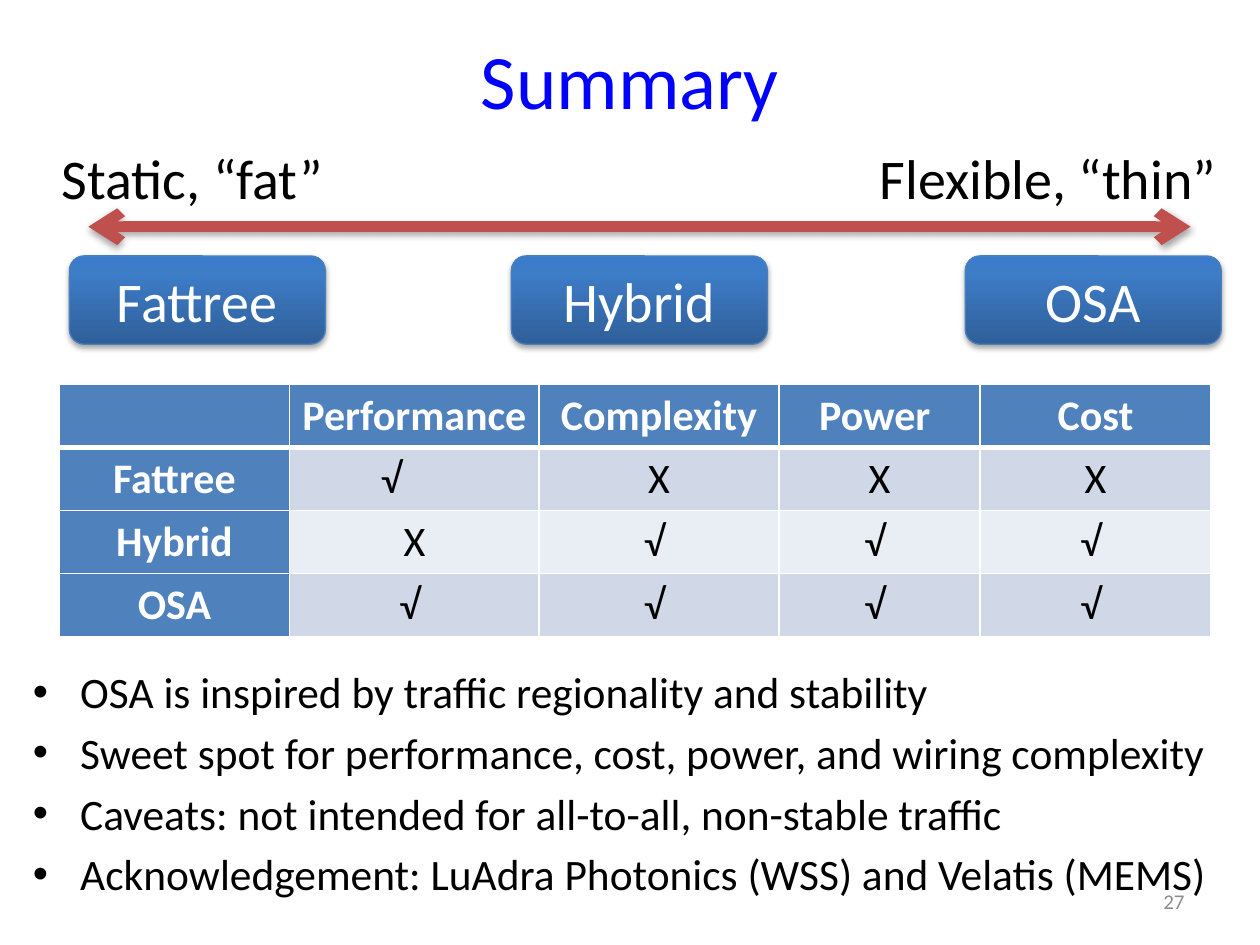
"""Build the summary slide comparing the Fattree, Hybrid and OSA designs."""
import copy

import lxml.etree
import pptx
import pptx.dml.color
import pptx.enum.shapes
import pptx.enum.text
import pptx.oxml.ns
import pptx.util

Cm = pptx.util.Cm
Pt = pptx.util.Pt
ALIGN = pptx.enum.text.PP_ALIGN
ANCHOR = pptx.enum.text.MSO_ANCHOR
qn = pptx.oxml.ns.qn


def color(value):
    """Turn a hex string into a colour."""
    return pptx.dml.color.RGBColor.from_string(value)


def add_element(parent, tag, **attributes):
    """Append an XML child with the given attributes."""
    values = {key: str(value) for key, value in attributes.items()}
    return lxml.etree.SubElement(parent, qn(tag), values)


def write_text(frame, text, size=24, fill="000000", bold=False, align=None,
               anchor=None, font="Calibri"):
    """Write one paragraph per line of text in one format."""
    frame.text = text
    frame.word_wrap = True
    if anchor is not None:
        frame.vertical_anchor = anchor
    for paragraph in frame.paragraphs:
        paragraph.alignment = align
        for run in paragraph.runs:
            run.font.name, run.font.size, run.font.bold = font, Pt(size), bold
            run.font.color.rgb = color(fill)


class SummarySlide:
    """Hold the style and the current slide."""

    HEADER, BANDS = "4F81BD", ("D0D8E8", "E9EDF4")
    CARD_STOPS = ((0, "2F5F99"), (0.8, "3D7CC7"), (1, "3A7CCB"))
    CARD_EDGE, ARROW, WHITE = "4B7EBC", "C0504D", "FFFFFF"

    def __init__(self, presentation):
        """Add a title and content slide."""
        self.slide = presentation.slides.add_slide(presentation.slide_layouts[1])
        self.shapes = self.slide.shapes

    def placeholder(self, index, text, box, **style):
        """Move and fill a template placeholder."""
        holder = self.slide.placeholders[index]
        holder.left, holder.top, holder.width, holder.height = map(Cm, box)
        write_text(holder.text_frame, text, **style)
        holder.text_frame.auto_size = pptx.enum.text.MSO_AUTO_SIZE.NONE

    def label(self, text, box, **style):
        """Add a text box."""
        write_text(self.shapes.add_textbox(*map(Cm, box)).text_frame, text, **style)

    def shadow(self, effects):
        """Put the soft downward shadow in an effect list."""
        outer = add_element(effects, "a:outerShdw", blurRad=40000, dist=23000,
                            dir=5400000, rotWithShape=0)
        black = add_element(outer, "a:srgbClr", val="000000")
        add_element(black, "a:alpha", val=35000)

    def double_arrow(self, left, right, height):
        """Add a horizontal line with an arrowhead at both ends."""
        axis = self.shapes.add_connector(
            pptx.enum.shapes.MSO_CONNECTOR.STRAIGHT,
            Cm(left), Cm(height), Cm(right), Cm(height))
        axis.line.color.rgb = color(self.ARROW)
        axis.line.width = Pt(6)
        outline = axis.line._get_or_add_ln()
        for end in ("a:headEnd", "a:tailEnd"):
            add_element(outline, end, type="arrow")
        self.shadow(add_element(axis._element.spPr, "a:effectLst"))

    def card(self, text, left, top, width, height):
        """Add a rounded box with a vertical gradient."""
        card = self.shapes.add_shape(
            pptx.enum.shapes.MSO_SHAPE.ROUNDED_RECTANGLE,
            Cm(left), Cm(top), Cm(width), Cm(height))
        card.fill.gradient()
        card.fill.gradient_angle = 90
        stops = card._element.spPr.find(".//" + qn("a:gsLst"))
        stops.append(copy.deepcopy(stops[-1]))
        for stop, (position, value) in zip(card.fill.gradient_stops, self.CARD_STOPS):
            stop.position = position
            stop.color.rgb = color(value)
        card.line.color.rgb = color(self.CARD_EDGE)
        card.line.width = Pt(0.75)
        card.shadow.inherit = False
        self.shadow(card._element.spPr.find(qn("a:effectLst")))
        write_text(card.text_frame, text, size=32, fill=self.WHITE,
                   align=ALIGN.CENTER, anchor=ANCHOR.MIDDLE)

    def borders(self, cell, top, bottom):
        """Draw white borders around a cell, widths in points."""
        properties = cell._tc.get_or_add_tcPr()
        sides = (("a:lnL", 1), ("a:lnR", 1), ("a:lnT", top), ("a:lnB", bottom))
        for index, (side, width) in enumerate(sides):
            edge = add_element(properties, side, w=Pt(width))
            add_element(add_element(edge, "a:solidFill"), "a:srgbClr", val=self.WHITE)
            properties.insert(index, edge)

    def comparison(self, rows, left, top, widths, row_height):
        """Add the table with a header row and a header column."""
        grid = self.shapes.add_table(
            len(rows), len(widths), Cm(left), Cm(top),
            Cm(sum(widths)), Cm(row_height * len(rows))).table
        for column, width in zip(grid.columns, widths):
            column.width = Cm(width)
        for r, row in enumerate(rows):
            grid.rows[r].height = Cm(row_height)
            for c, text in enumerate(row):
                cell = grid.cell(r, c)
                heading = r == 0 or c == 0
                cell.fill.solid()
                cell.fill.fore_color.rgb = color(
                    self.HEADER if heading else self.BANDS[(r - 1) % 2])
                self.borders(cell, 3 if r == 1 else 1, 3 if r == 0 else 1)
                write_text(cell.text_frame, text, bold=heading, align=ALIGN.CENTER,
                           fill=self.WHITE if heading else "000000")
        return grid


def main():
    """Build and save the slide."""
    deck = pptx.Presentation()
    deck.slide_width, deck.slide_height = Cm(25.4), Cm(19.05)
    summary = SummarySlide(deck)

    summary.placeholder(0, "Summary", (1.27, 0, 22.86, 3.18), size=44,
                        fill="0000FF", align=ALIGN.CENTER, anchor=ANCHOR.MIDDLE)
    takeaways = (
        "OSA is inspired by traffic regionality and stability",
        "Sweet spot for performance, cost, power, and wiring complexity",
        "Caveats: not intended for all-to-all, non-stable traffic",
        "Acknowledgement: LuAdra Photonics (WSS) and Velatis (MEMS)",
    )
    summary.placeholder(1, "\n".join(takeaways), (0.41, 13.28, 24.82, 4.78), size=24.8)
    summary.label("27", (18.21, 17.65, 5.92, 1.02), size=12, fill="8C8C8C",
                  align=ALIGN.RIGHT, anchor=ANCHOR.MIDDLE)

    summary.double_arrow(1.78, 24, 4.57)
    for extreme, left, width in (("Static, “fat”", 0.99, 6.35),
                                 ("Flexible, “thin”", 17.48, 7.54)):
        summary.label(extreme, (left, 2.77, width, 1.62), size=32)
    for design, left in (("Fattree", 1.4), ("Hybrid", 10.31), ("OSA", 19.46)):
        summary.card(design, left, 5.16, 5.16, 1.78)

    ratings = (
        ("", "Performance", "Complexity", "Power ", "Cost"),
        ("Fattree", "√ ", "X", "X", "X"),
        ("Hybrid", "X", "√ ", "√ ", "√ "),
        ("OSA", "√ ", "√ ", "√ ", "√ "),
    )
    grid = summary.comparison(ratings, 1.19, 7.75, (4.65, 5.03, 4.83, 4.06, 4.65), 1.27)
    grid.cell(1, 1).margin_right = Cm(1)

    deck.save("out.pptx")


if __name__ == "__main__":
    main()
